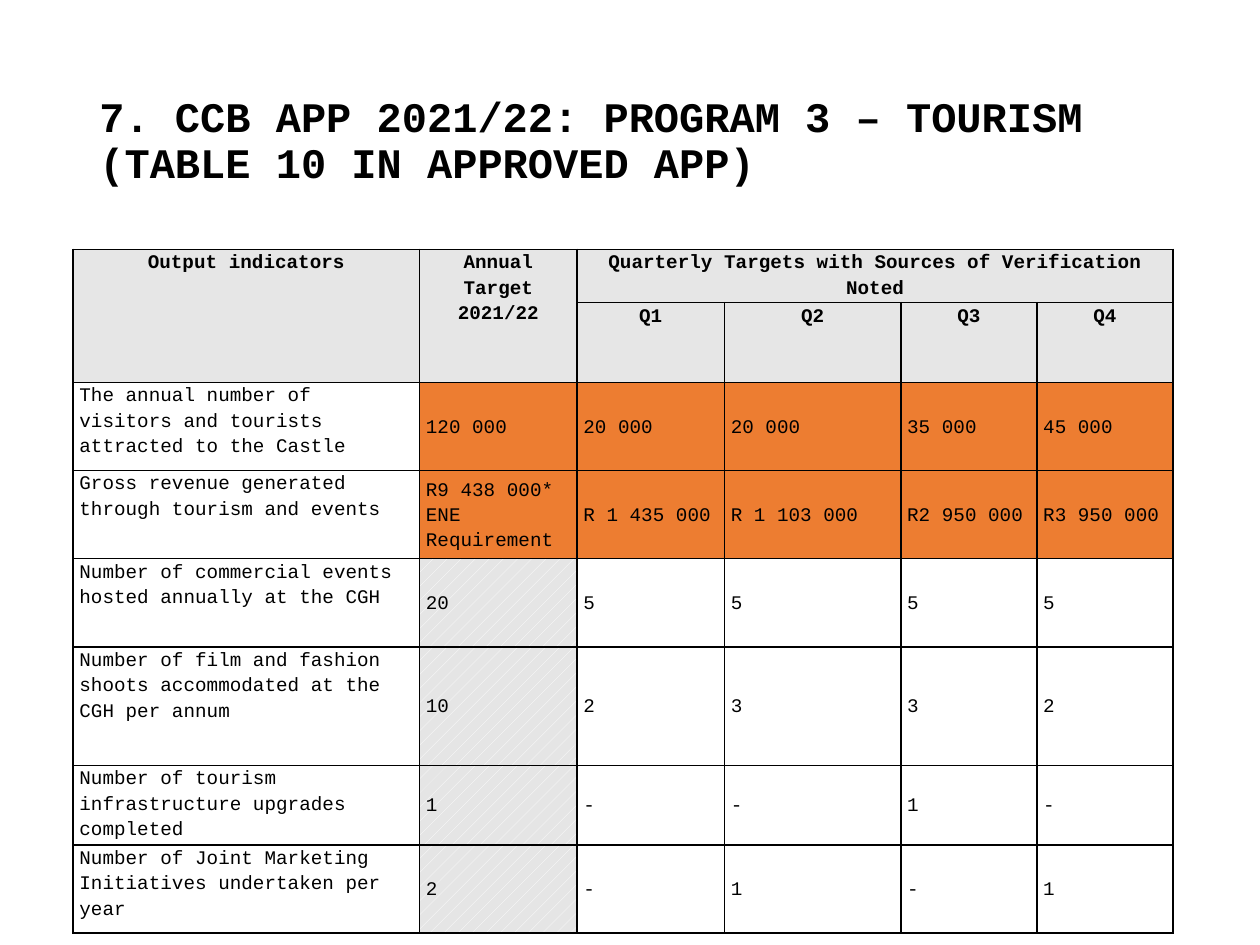
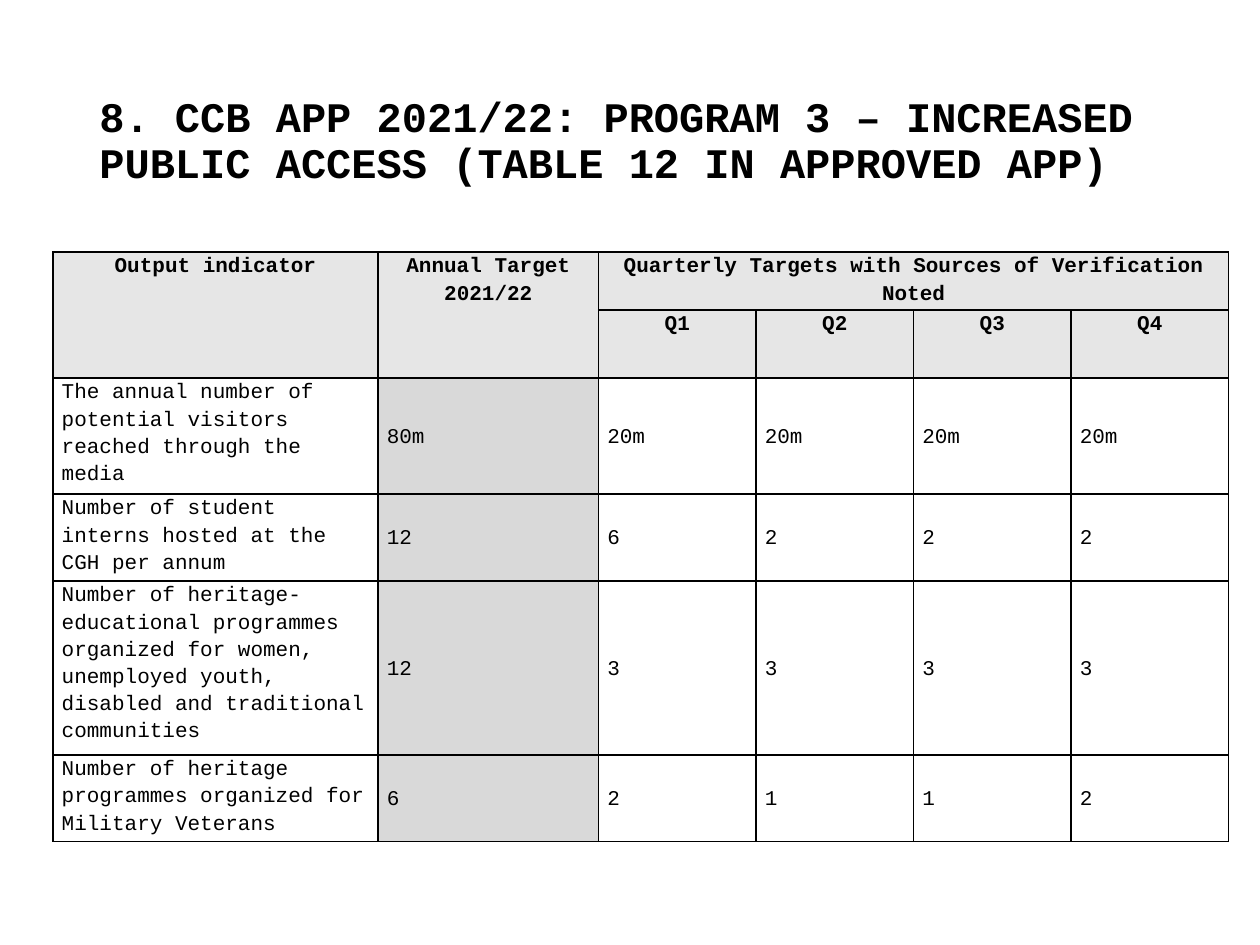
from lxml import etree
from pptx import Presentation
from pptx.dml.color import RGBColor
from pptx.enum import dml, text
from pptx.oxml import ns
from pptx.util import Inches, Pt

BLACK = RGBColor(0x00, 0x00, 0x00)
WHITE = RGBColor(0xFF, 0xFF, 0xFF)
HEADER_GREY = RGBColor(0xE6, 0xE6, 0xE6)
HATCH_GREY = RGBColor(0xE5, 0xE5, 0xE5)
TARGET_GREY = RGBColor(0xD9, 0xD9, 0xD9)
ORANGE = RGBColor(0xED, 0x7D, 0x31)
FONT = "Courier New"
TITLE_BOX = (0.69, 0.4, 8.62, 1.45)
QUARTERS = ["Q1", "Q2", "Q3", "Q4"]

TOURISM_ROWS = [
    ["The annual number of visitors and tourists attracted to the Castle",
     "120 000", "20 000", "20 000", "35 000", "45 000"],
    ["Gross revenue generated through tourism and events",
     "R9 438 000* ENE Requirement", "R 1 435 000", "R 1 103 000", "R2 950 000", "R3 950 000"],
    ["Number of commercial events hosted annually at the CGH", "20", "5", "5", "5", "5"],
    ["Number of film and fashion shoots accommodated at the CGH per annum",
     "10", "2", "3", "3", "2"],
    ["Number of tourism infrastructure upgrades completed", "1", "-", "-", "1", "-"],
    ["Number of Joint Marketing Initiatives undertaken per year", "2", "-", "1", "-", "1"],
]
ACCESS_ROWS = [
    ["The annual number of potential visitors reached through the media",
     "80m", "20m", "20m", "20m", "20m"],
    ["Number of student interns hosted at the CGH per annum", "12", "6", "2", "2", "2"],
    ["Number of heritage-educational programmes organized for women, unemployed youth, "
     "disabled and traditional communities", "12", "3", "3", "3", "3"],
    ["Number of heritage programmes organized for Military Veterans", "6", "2", "1", "1", "2"],
]


def style_font(font, size, bold):
    """Apply the shared typeface in black."""
    font.name, font.size, font.bold = FONT, Pt(size), bold
    font.color.rgb = BLACK


def add_title(slide, wording, box):
    """Place the slide title in its box."""
    frame = slide.shapes.add_textbox(*map(Inches, box)).text_frame
    frame.word_wrap = True
    frame.vertical_anchor = text.MSO_ANCHOR.MIDDLE
    paragraph = frame.paragraphs[0]
    paragraph.text = wording
    paragraph.line_spacing = 0.9
    style_font(paragraph.font, 24, True)


def set_borders(cell):
    """Draw a thin black line on all four sides of a cell."""
    properties = cell._tc.get_or_add_tcPr()
    for position, side in enumerate(("lnL", "lnR", "lnT", "lnB")):
        line = etree.Element(ns.qn(f"a:{side}"), w=str(Pt(1)))
        fill = etree.SubElement(line, ns.qn("a:solidFill"))
        etree.SubElement(fill, ns.qn("a:srgbClr"), val=str(BLACK))
        properties.insert(position, line)


def paint_cell(cell, color):
    """Fill a cell with a plain colour, the hatch, or nothing."""
    if color is None:
        cell.fill.background()
    elif color == HATCH_GREY:
        cell.fill.patterned()
        cell.fill.pattern = dml.MSO_PATTERN.PERCENT_10
        cell.fill.fore_color.rgb = WHITE
        cell.fill.back_color.rgb = HATCH_GREY
    else:
        cell.fill.solid()
        cell.fill.fore_color.rgb = color


def format_cell(cell, size, inset, color, header, centred_vertically):
    """Set the margins, fill, borders and text style of a cell."""
    cell.margin_left = cell.margin_right = Inches(inset)
    cell.margin_top = cell.margin_bottom = 0
    middle, top = text.MSO_ANCHOR.MIDDLE, text.MSO_ANCHOR.TOP
    cell.vertical_anchor = middle if centred_vertically else top
    paint_cell(cell, color)
    set_borders(cell)
    for paragraph in cell.text_frame.paragraphs:
        paragraph.alignment = text.PP_ALIGN.CENTER if header else text.PP_ALIGN.LEFT
        paragraph.line_spacing = 1.15
        paragraph.space_after = Pt(8)
        style_font(paragraph.font, size, header)


def add_targets_table(slide, left, top, widths, heights, indicator_heading, rows,
                      size, inset, body_color):
    """Build a table of annual and quarterly targets under a two-row header."""
    headings = [
        [indicator_heading, "Annual Target 2021/22",
         "Quarterly Targets with Sources of Verification Noted", "", "", ""],
        ["", "", *QUARTERS],
    ]
    contents = headings + rows
    frame = slide.shapes.add_table(len(contents), len(widths), Inches(left), Inches(top),
                                   Inches(sum(widths)), Inches(sum(heights)))
    table = frame.table
    table.first_row = table.horz_banding = False
    for column, width in zip(table.columns, widths):
        column.width = Inches(width)
    for row, height in zip(table.rows, heights):
        row.height = Inches(height)
    for row_index, values in enumerate(contents):
        header = row_index < len(headings)
        for column_index, value in enumerate(values):
            cell = table.cell(row_index, column_index)
            cell.text = value
            color = HEADER_GREY if header else body_color(row_index - len(headings), column_index)
            format_cell(cell, size, inset, color, header, not header and column_index > 0)
    for column_index in range(2):
        table.cell(0, column_index).merge(table.cell(1, column_index))
    table.cell(0, 2).merge(table.cell(0, 5))


def tourism_color(row, column):
    """Highlight the first two indicators and hatch the other annual targets."""
    if column == 0:
        return None
    if row < 2:
        return ORANGE
    return HATCH_GREY if column == 1 else None


def access_color(row, column):
    """Shade the annual targets."""
    return TARGET_GREY if column == 1 else None


def add_blank_slide(presentation):
    """Append a slide on the blank layout."""
    return presentation.slides.add_slide(presentation.slide_layouts[6])


def add_tourism_slide(presentation):
    """Show the tourism targets."""
    slide = add_blank_slide(presentation)
    add_title(slide, "7. CCB APP 2021/22: PROGRAM 3 – TOURISM (TABLE 10 IN APPROVED APP)", TITLE_BOX)
    add_targets_table(slide, 0.58, 1.98, [2.75, 1.25, 1.17, 1.4, 1.08, 1.08],
                      [0.4, 0.6, 0.7, 0.7, 0.7, 0.94, 0.6, 0.7],
                      "Output indicators", TOURISM_ROWS, 11, 0.05, tourism_color)


def add_access_slide(presentation):
    """Show the public access targets."""
    slide = add_blank_slide(presentation)
    add_title(slide, "8. CCB APP 2021/22: PROGRAM 3 – INCREASED PUBLIC ACCESS "
                     "(TABLE 12 IN APPROVED APP)", TITLE_BOX)
    add_targets_table(slide, 0.42, 2, [2.58, 1.75] + [1.25] * 4,
                      [0.43, 0.54, 0.87, 0.65, 1.3, 0.65],
                      "Output indicator", ACCESS_ROWS, 12, 0.07, access_color)


def main():
    """Build and save the presentation."""
    presentation = Presentation()
    presentation.slide_width, presentation.slide_height = Inches(10), Inches(7.5)
    add_tourism_slide(presentation)
    add_access_slide(presentation)
    presentation.save("out.pptx")


if __name__ == "__main__":
    main()
